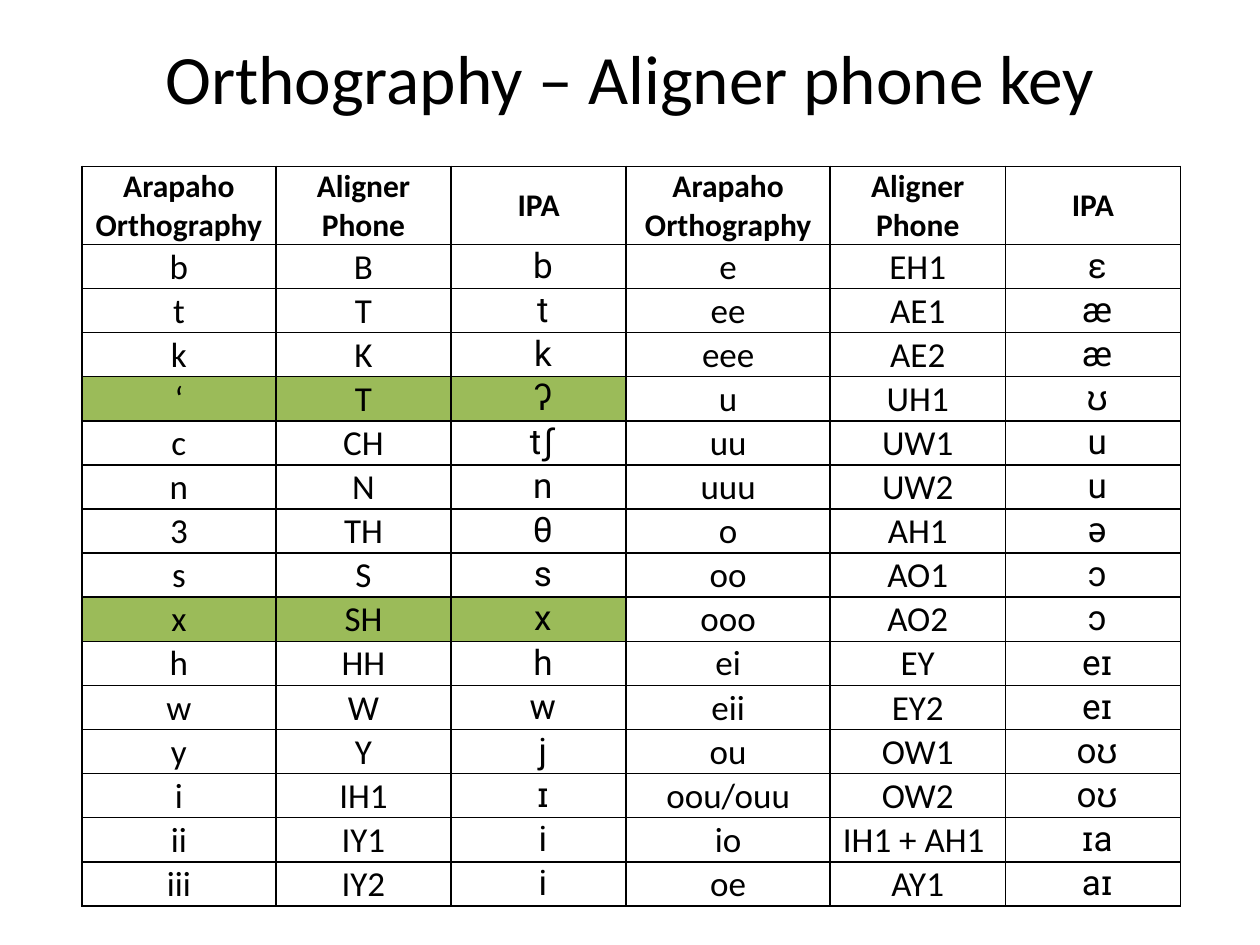
import pptx
import pptx.dml.color
import pptx.enum.text
import pptx.oxml
import pptx.oxml.ns
import pptx.util
from pptx.util import Inches

BLACK = pptx.dml.color.RGBColor(0x00, 0x00, 0x00)
GREEN = pptx.dml.color.RGBColor(0x9B, 0xBB, 0x59)
MIDDLE = pptx.enum.text.MSO_ANCHOR.MIDDLE
TOP = pptx.enum.text.MSO_ANCHOR.TOP

HEADINGS = ("Arapaho Orthography", "Aligner Phone", "IPA")
CONSONANTS = [
    ("b", "B", "b"), ("t", "T", "t"), ("k", "K", "k"), ("‘", "T", "ʔ"),
    ("c", "CH", "tʃ"), ("n", "N", "n"), ("3", "TH", "θ"), ("s", "S", "s"),
    ("x", "SH", "x"), ("h", "HH", "h"), ("w", "W", "w"), ("y", "Y", "j"),
    ("i", "IH1", "ɪ"), ("ii", "IY1", "i"), ("iii", "IY2", "i"),
]
VOWELS = [
    ("e", "EH1", "ɛ"), ("ee", "AE1", "æ"), ("eee", "AE2", "æ"), ("u", "UH1", "ʊ"),
    ("uu", "UW1", "u"), ("uuu", "UW2", "u"), ("o", "AH1", "ə"), ("oo", "AO1", "ɔ"),
    ("ooo", "AO2", "ɔ"), ("ei", "EY", "eɪ"), ("eii", "EY2", "eɪ"), ("ou", "OW1", "oʊ"),
    ("oou/ouu", "OW2", "oʊ"), ("io", "IH1 + AH1 ", "ɪa"), ("oe", "AY1", "aɪ"),
]
HIGHLIGHTED = ("‘", "x")
COLUMN_WIDTHS = (1.54, 1.39, 1.39, 1.62, 1.39, 1.39)
HEADER_HEIGHT = 0.62
ROW_HEIGHT = 0.35


def write_text(text_frame, text, size=20, font="Calibri", bold=False):
    """Write one centred black paragraph into a text frame."""
    paragraph = text_frame.paragraphs[0]
    paragraph.alignment = pptx.enum.text.PP_ALIGN.CENTER
    run = paragraph.add_run()
    run.text = text
    run.font.size = pptx.util.Pt(size)
    run.font.name = font
    run.font.bold = bold
    run.font.color.rgb = BLACK


def draw_borders(cell):
    """Give a cell a thin black line on every side."""
    properties = cell._tc.get_or_add_tcPr()
    for position, side in enumerate(("lnL", "lnR", "lnT", "lnB")):
        line = pptx.oxml.parse_xml(
            f'<a:{side} {pptx.oxml.ns.nsdecls("a")} w="12700"><a:solidFill>'
            f'<a:srgbClr val="{BLACK}"/></a:solidFill></a:{side}>'
        )
        properties.insert(position, line)


def fill_cell(cell, text, anchor=MIDDLE, fill=None, **text_format):
    """Set the text, margins, fill and borders of a cell."""
    cell.margin_left = cell.margin_top = cell.margin_right = Inches(0.01)
    cell.margin_bottom = 0
    cell.vertical_anchor = anchor
    if fill is None:
        cell.fill.background()
    else:
        cell.fill.solid()
        cell.fill.fore_color.rgb = fill
    draw_borders(cell)
    write_text(cell.text_frame, text, **text_format)


def add_title(slide, left, top, width, height):
    """Add the slide title in the given box."""
    text_frame = slide.shapes.add_textbox(left, top, width, height).text_frame
    text_frame.word_wrap = True
    text_frame.vertical_anchor = MIDDLE
    write_text(text_frame, "Orthography – Aligner phone key", size=39.6)


def add_phone_group(table, first_column, phones):
    """Fill three columns with orthography, aligner phone and IPA."""
    for offset, heading in enumerate(HEADINGS):
        fill_cell(table.cell(0, first_column + offset), heading, size=18, bold=True)
    for row, (letter, phone, ipa) in enumerate(phones, start=1):
        fill = GREEN if letter in HIGHLIGHTED else None
        fill_cell(table.cell(row, first_column), letter, fill=fill)
        fill_cell(table.cell(row, first_column + 1), phone, fill=fill)
        fill_cell(table.cell(row, first_column + 2), f" {ipa}", anchor=TOP, fill=fill,
                  font="Roboto")


def add_phone_table(slide, left, top, width, height):
    """Add the phone key table in the given box."""
    frame = slide.shapes.add_table(
        len(CONSONANTS) + 1, len(COLUMN_WIDTHS), left, top, width, height)
    table = frame.table
    table.first_row = table.horz_banding = False
    for column, column_width in zip(table.columns, COLUMN_WIDTHS):
        column.width = Inches(column_width)
    for index, row in enumerate(table.rows):
        row.height = Inches(ROW_HEIGHT if index else HEADER_HEIGHT)
    add_phone_group(table, 0, CONSONANTS)
    add_phone_group(table, len(HEADINGS), VOWELS)


def main():
    """Build and save the presentation."""
    presentation = pptx.Presentation()
    presentation.slide_width = Inches(10)
    presentation.slide_height = Inches(7.5)
    slide = presentation.slides.add_slide(presentation.slide_layouts[6])
    add_title(slide, Inches(0.5), Inches(0.24), Inches(9), Inches(0.74))
    add_phone_table(slide, Inches(0.65), Inches(1.32), Inches(sum(COLUMN_WIDTHS)),
                    Inches(HEADER_HEIGHT + ROW_HEIGHT * len(CONSONANTS)))
    presentation.save("out.pptx")


if __name__ == "__main__":
    main()
